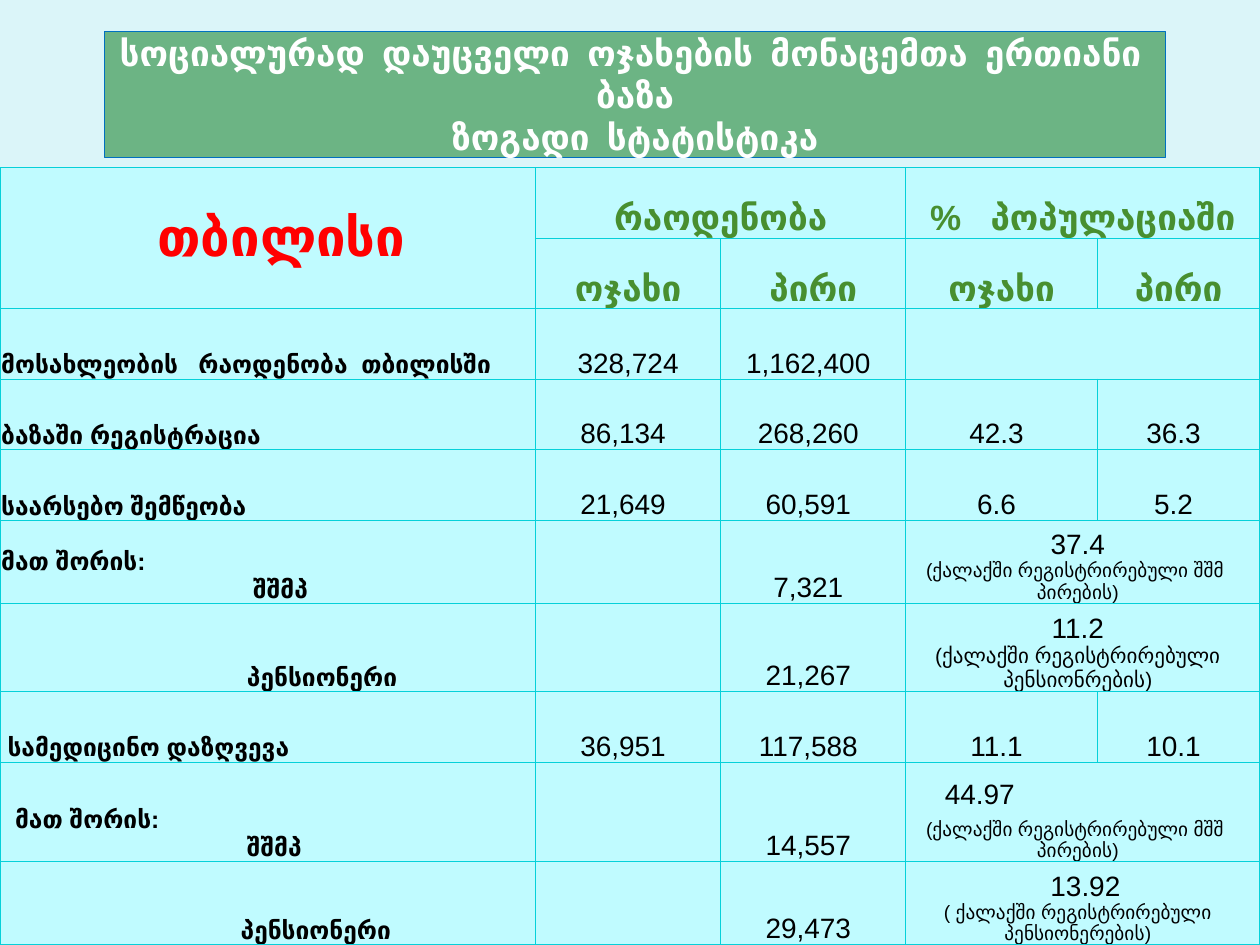
from dataclasses import dataclass

from lxml.etree import SubElement
from pptx import Presentation
from pptx.dml.color import RGBColor
from pptx.enum.text import MSO_ANCHOR, MSO_AUTO_SIZE, PP_ALIGN
from pptx.oxml.ns import qn
from pptx.slide import Slide
from pptx.table import Table, _Cell
from pptx.util import Inches, Pt


@dataclass(frozen=True)
class Theme:
    background: str = "DBF5F9"
    banner: str = "6CB484"
    banner_line: str = "0070C0"
    banner_text: str = "FFFFFF"
    cell: str = "C0FBFF"
    border: str = "06D0D9"
    heading: str = "488F30"
    city: str = "FF0000"
    text: str = "000000"
    title_font: str = "Roboto"
    table_font: str = "Arial"
    line_width: float = 0.75
    city_size: int = 30
    heading_size: int = 20
    label_size: int = 14
    value_size: int = 16
    large_note_size: int = 12
    note_size: int = 11


@dataclass(frozen=True)
class Line:
    text: str
    size: int
    bold: bool = False
    color: str = Theme.text
    align: PP_ALIGN = PP_ALIGN.CENTER
    indent: float = 0
    space_before: float = 0


@dataclass(frozen=True)
class Entry:
    row: int
    column: int
    lines: tuple[Line, ...]
    row_span: int = 1
    column_span: int = 1
    anchor: MSO_ANCHOR = MSO_ANCHOR.BOTTOM
    margin_right: float = 0.01


THEME = Theme()
WIDTH, HEIGHT = Inches(10), Inches(7.5)
TABLE_TOP = Inches(1.33)
COLUMN_SHARES = (0.425, 0.147, 0.147, 0.152, 0.129)
ROW_HEIGHTS = (0.56,) * 5 + (0.66, 0.7, 0.56, 0.79, 0.66)
TITLE = ("სოციალურად  დაუცველი  ოჯახების  მონაცემთა  ერთიანი  ბაზა\n"
         "ზოგადი  სტატისტიკა")


def heading(row: int, column: int, text: str, span: int = 1) -> Entry:
    line = Line(text, THEME.heading_size, True, THEME.heading)
    return Entry(row, column, (line,), column_span=span)


def label(row: int, *parts: tuple[str, float]) -> Entry:
    """Row label in the first column; each part is a text and its indent in inches."""
    return Entry(row, 0, tuple(
        Line(text, THEME.label_size, True, align=PP_ALIGN.LEFT, indent=indent)
        for text, indent in parts))


def figure(row: int, column: int, text: str, margin_right: float = 0.09) -> Entry:
    return Entry(row, column, (Line(text, THEME.value_size),), margin_right=margin_right)


def share(row: int, value: Line, note: str, size: int, gap: float = 0) -> Entry:
    """Percentage over its explanation, across both population columns."""
    lines = (value, Line(note, size, space_before=gap))
    return Entry(row, 3, lines, column_span=2, margin_right=0.09)


CITY = Entry(0, 0, (Line("თბილისი", THEME.city_size, True, THEME.city,
                         PP_ALIGN.LEFT, 1.16),),
             row_span=2, anchor=MSO_ANCHOR.MIDDLE)

HEADINGS = (
    heading(0, 1, "რაოდენობა", 2),
    heading(0, 3, "%   პოპულაციაში", 2),
    *(heading(1, column, text)
      for column, text in enumerate(("ოჯახი", "პირი") * 2, start=1)),
)

LABELS = (
    label(2, ("მოსახლეობის   რაოდენობა  თბილისში", 0)),
    label(3, ("ბაზაში რეგისტრაცია", 0)),
    label(4, ("საარსებო შემწეობა", 0)),
    label(5, ("მათ შორის:", 0), ("შშმპ", 2)),
    label(6, ("პენსიონერი", 1.95)),
    label(7, ("სამედიცინო დაზღვევა", 0.05)),
    label(8, ("მათ შორის:", 0.11), ("შშმპ", 1.95)),
    label(9, ("პენსიონერი", 1.9)),
)

FULL_ROWS = {
    3: ("86,134", "268,260", "42.3", "36.3"),
    4: ("21,649", "60,591", "6.6", "5.2"),
    7: ("36,951", "117,588", "11.1", "10.1"),
}
PERSONS = {2: "1,162,400", 5: "7,321", 6: "21,267", 8: "14,557", 9: "29,473"}

FIGURES = (
    figure(2, 1, "328,724", 0.01),
    Entry(2, 3, (), column_span=2),
    *(figure(row, column, text) for row, texts in FULL_ROWS.items()
      for column, text in enumerate(texts, start=1)),
    *(figure(row, 2, text) for row, text in PERSONS.items()),
)

SHARES = (
    share(5, Line("37.4", THEME.value_size),
          "(ქალაქში რეგისტრირებული შშმ  პირების)", THEME.note_size),
    share(6, Line("11.2", THEME.value_size),
          "(ქალაქში რეგისტრირებული პენსიონრების)", THEME.large_note_size),
    share(8, Line("44.97", THEME.value_size, align=PP_ALIGN.LEFT, indent=0.3),
          "(ქალაქში რეგისტრირებული მშშ  პირების)", THEME.note_size, 5),
    share(9, Line("13.92", THEME.value_size, indent=0.12),
          "( ქალაქში რეგისტრირებული პენსიონერების)", THEME.note_size),
)


def rgb(color: str) -> RGBColor:
    return RGBColor.from_string(color)


def style_cell(cell: _Cell) -> None:
    properties = cell._tc.get_or_add_tcPr()
    for side in ("lnL", "lnR", "lnT", "lnB"):
        border = SubElement(properties, qn(f"a:{side}"), w=str(Pt(THEME.line_width)))
        fill = SubElement(border, qn("a:solidFill"))
        SubElement(fill, qn("a:srgbClr"), val=THEME.border)
    cell.fill.solid()
    cell.fill.fore_color.rgb = rgb(THEME.cell)


def write_entry(table: Table, entry: Entry) -> None:
    cell = table.cell(entry.row, entry.column)
    if entry.row_span > 1 or entry.column_span > 1:
        cell.merge(table.cell(entry.row + entry.row_span - 1,
                              entry.column + entry.column_span - 1))
    cell.vertical_anchor = entry.anchor
    cell.margin_left = cell.margin_top = Inches(0.01)
    cell.margin_right, cell.margin_bottom = Inches(entry.margin_right), 0
    if entry is CITY:
        cell.margin_left = Inches(0.09)
    cell.text_frame.text = "\n".join(line.text for line in entry.lines)
    for paragraph, line in zip(cell.text_frame.paragraphs, entry.lines):
        paragraph.alignment = line.align
        paragraph.space_before = Pt(line.space_before)
        paragraph._p.get_or_add_pPr().set("marL", str(Inches(line.indent)))
        for run in paragraph.runs:
            run.font.name, run.font.size = THEME.table_font, Pt(line.size)
            run.font.bold, run.font.color.rgb = line.bold, rgb(line.color)


def add_title(slide: Slide) -> None:
    banner = slide.shapes.title
    banner.left, banner.top = int(WIDTH * 0.083), Inches(0.25)
    banner.width, banner.height = int(WIDTH * 0.842), Inches(1)
    outline = SubElement(banner._element.spPr, qn("a:prstGeom"), prst="roundRect")
    SubElement(outline, qn("a:avLst"))
    banner.fill.solid()
    banner.fill.fore_color.rgb = rgb(THEME.banner)
    banner.line.color.rgb = rgb(THEME.banner_line)
    banner.line.width = Pt(THEME.line_width)
    frame = banner.text_frame
    frame.text = TITLE
    frame.auto_size = MSO_AUTO_SIZE.NONE
    frame.vertical_anchor = MSO_ANCHOR.MIDDLE
    for paragraph in frame.paragraphs:
        paragraph.alignment = PP_ALIGN.CENTER
        for run in paragraph.runs:
            run.font.name, run.font.size = THEME.title_font, Pt(THEME.heading_size)
            run.font.bold, run.font.color.rgb = True, rgb(THEME.banner_text)


def add_statistics(slide: Slide) -> None:
    table = slide.shapes.add_table(len(ROW_HEIGHTS), len(COLUMN_SHARES), 0, TABLE_TOP,
                                   WIDTH, HEIGHT - TABLE_TOP).table
    table.first_row = table.horz_banding = False
    for column, width in zip(table.columns, COLUMN_SHARES):
        column.width = int(WIDTH * width)
    for row, height in zip(table.rows, ROW_HEIGHTS):
        row.height = Inches(height)
    for cell in table.iter_cells():
        style_cell(cell)
    for entry in (CITY, *HEADINGS, *LABELS, *FIGURES, *SHARES):
        write_entry(table, entry)


def main() -> None:
    presentation = Presentation()
    presentation.slide_width, presentation.slide_height = WIDTH, HEIGHT
    slide = presentation.slides.add_slide(presentation.slide_layouts[5])
    slide.background.fill.solid()
    slide.background.fill.fore_color.rgb = rgb(THEME.background)
    add_title(slide)
    add_statistics(slide)
    presentation.save("out.pptx")


if __name__ == "__main__":
    main()
